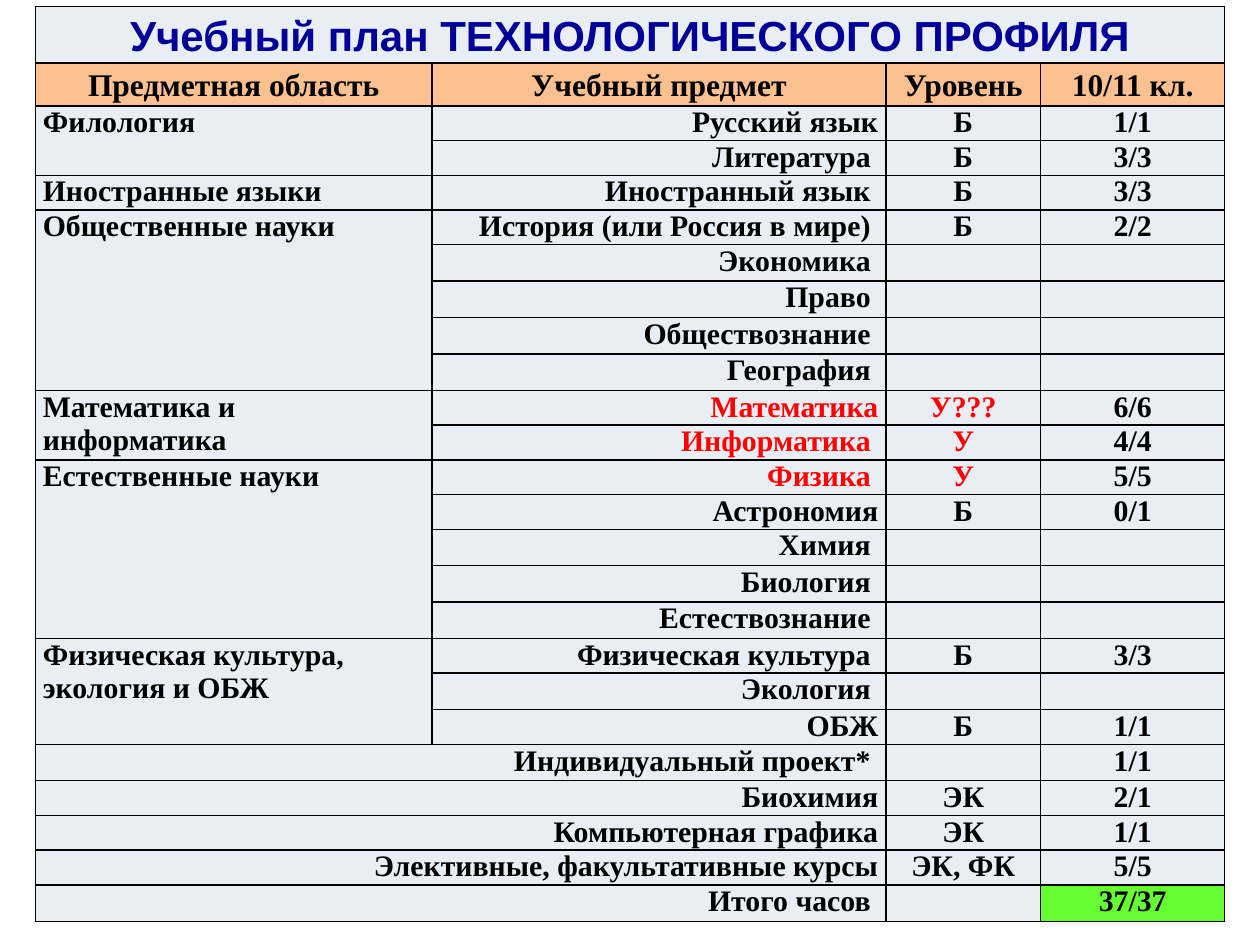
from lxml import etree
from pptx import Presentation
from pptx.dml.color import RGBColor
from pptx.enum.text import PP_ALIGN
from pptx.oxml.ns import qn
from pptx.util import Inches, Pt

LEFT, CENTER, RIGHT = PP_ALIGN.LEFT, PP_ALIGN.CENTER, PP_ALIGN.RIGHT
PALE, ORANGE, GREEN = "E9EDF4", "FAC090", "66FF33"
BLACK, NAVY, RED = "000000", "000099", "FF0000"
BODY_FONT, TITLE_FONT = "Times New Roman", "Arial"
BODY_SIZE, HEADER_SIZE, TITLE_SIZE = 17, 18, 24

TABLE_LEFT, TABLE_TOP, TABLE_HEIGHT = 0.28, 0.05, 7.13
COLUMN_WIDTHS = [3.15, 3.6, 1.23, 1.46]
TITLE_HEIGHT, HEADER_HEIGHT = 0.45, 0.34

TITLE = "Учебный план ТЕХНОЛОГИЧЕСКОГО ПРОФИЛЯ"
HEADERS = ["Предметная область", "Учебный предмет", "Уровень", "10/11 кл."]

# Subject areas: name and its subjects as (subject, level, hours)
AREAS = [
    ("Филология", [
        ("Русский язык", "Б", "1/1"),
        ("Литература ", "Б", "3/3"),
    ]),
    ("Иностранные языки", [
        ("Иностранный язык ", "Б", "3/3"),
    ]),
    ("Общественные науки", [
        ("История (или Россия в мире) ", "Б", "2/2"),
        ("Экономика ", "", ""),
        ("Право ", "", ""),
        ("Обществознание ", "", ""),
        ("География ", "", ""),
    ]),
    ("Математика и информатика", [
        ("Математика", "У???", "6/6"),
        ("Информатика ", "У", "4/4"),
    ]),
    ("Естественные науки", [
        ("Физика ", "У", "5/5"),
        ("Астрономия", "Б", "0/1"),
        ("Химия ", "", ""),
        ("Биология ", "", ""),
        ("Естествознание ", "", ""),
    ]),
    ("Физическая культура, экология и ОБЖ", [
        ("Физическая культура ", "Б", "3/3"),
        ("Экология ", "", ""),
        ("ОБЖ", "Б", "1/1"),
    ]),
]

# Rows whose name spans the first two columns
EXTRAS = [
    ("Индивидуальный проект* ", "", "1/1"),
    ("Биохимия", "ЭК", "2/1"),
    ("Компьютерная графика", "ЭК", "1/1"),
    ("Элективные, факультативные курсы", "ЭК, ФК", "5/5"),
    ("Итого часов ", "", "37/37"),
]


def rgb(hex_color):
    return RGBColor.from_string(hex_color)


def add_borders(cell):
    properties = cell._tc.get_or_add_tcPr()
    for side in ("lnL", "lnR", "lnT", "lnB"):
        line = etree.SubElement(properties, qn(f"a:{side}"), w=str(Pt(1)))
        fill = etree.SubElement(line, qn("a:solidFill"))
        etree.SubElement(fill, qn("a:srgbClr"), val=BLACK)


def prepare_cell(cell):
    """Give a cell its margins, borders, base fill and empty-line size."""
    cell.margin_left = cell.margin_right = Inches(0.06)
    cell.margin_top = cell.margin_bottom = 0
    add_borders(cell)
    set_fill(cell, PALE)
    paragraph = cell.text_frame.paragraphs[0]
    etree.SubElement(paragraph._p, qn("a:endParaRPr"), sz=str(BODY_SIZE * 100))


def set_fill(cell, color):
    cell.fill.solid()
    cell.fill.fore_color.rgb = rgb(color)


def write(cell, text, align, color=BLACK, size=BODY_SIZE, font=BODY_FONT, spacing=None):
    if not text:
        return
    paragraph = cell.text_frame.paragraphs[0]
    paragraph.text = text
    paragraph.alignment = align
    paragraph.line_spacing = spacing
    for run in paragraph.runs:
        run.font.name = font
        run.font.size = Pt(size)
        run.font.bold = True
        run.font.color.rgb = rgb(color)


def add_plan_table(slide, row_count):
    frame = slide.shapes.add_table(
        row_count, len(COLUMN_WIDTHS), Inches(TABLE_LEFT), Inches(TABLE_TOP),
        Inches(sum(COLUMN_WIDTHS)), Inches(TABLE_HEIGHT))
    plan = frame.table
    plan.first_row = plan.horz_banding = False
    for column, width in zip(plan.columns, COLUMN_WIDTHS):
        column.width = Inches(width)
    subject_height = (TABLE_HEIGHT - TITLE_HEIGHT - HEADER_HEIGHT) / (row_count - 2)
    heights = [TITLE_HEIGHT, HEADER_HEIGHT] + [subject_height] * (row_count - 2)
    for row, height in zip(plan.rows, heights):
        row.height = Inches(height)
    for cell in plan.iter_cells():
        prepare_cell(cell)
    return plan


def write_heading(plan):
    plan.cell(0, 0).merge(plan.cell(0, len(HEADERS) - 1))
    write(plan.cell(0, 0), TITLE, CENTER, NAVY, TITLE_SIZE, TITLE_FONT, 1.15)
    for column, header in enumerate(HEADERS):
        cell = plan.cell(1, column)
        set_fill(cell, ORANGE)
        write(cell, header, CENTER, size=HEADER_SIZE, spacing=1.15)


def write_areas(plan, row):
    """Write the subjects by area and return the next free row."""
    for area, subjects in AREAS:
        if len(subjects) > 1:
            plan.cell(row, 0).merge(plan.cell(row + len(subjects) - 1, 0))
        write(plan.cell(row, 0), area, LEFT)
        for subject, level, hours in subjects:
            color = RED if level.startswith("У") else BLACK  # advanced level
            write(plan.cell(row, 1), subject, RIGHT, color)
            write(plan.cell(row, 2), level, CENTER, color)
            write(plan.cell(row, 3), hours, CENTER)
            row += 1
    return row


def write_extras(plan, first_row):
    for row, (name, level, hours) in enumerate(EXTRAS, first_row):
        plan.cell(row, 0).merge(plan.cell(row, 1))
        write(plan.cell(row, 0), name, RIGHT)
        write(plan.cell(row, 2), level, CENTER)
        write(plan.cell(row, 3), hours, CENTER)
    # Total hours
    set_fill(plan.cell(first_row + len(EXTRAS) - 1, 3), GREEN)


def main():
    prs = Presentation()
    prs.slide_width, prs.slide_height = Inches(10), Inches(7.5)
    slide = prs.slides.add_slide(prs.slide_layouts[6])

    subject_count = sum(len(subjects) for _, subjects in AREAS)
    plan = add_plan_table(slide, 2 + subject_count + len(EXTRAS))
    write_heading(plan)
    write_extras(plan, write_areas(plan, 2))

    prs.save("out.pptx")


if __name__ == "__main__":
    main()
